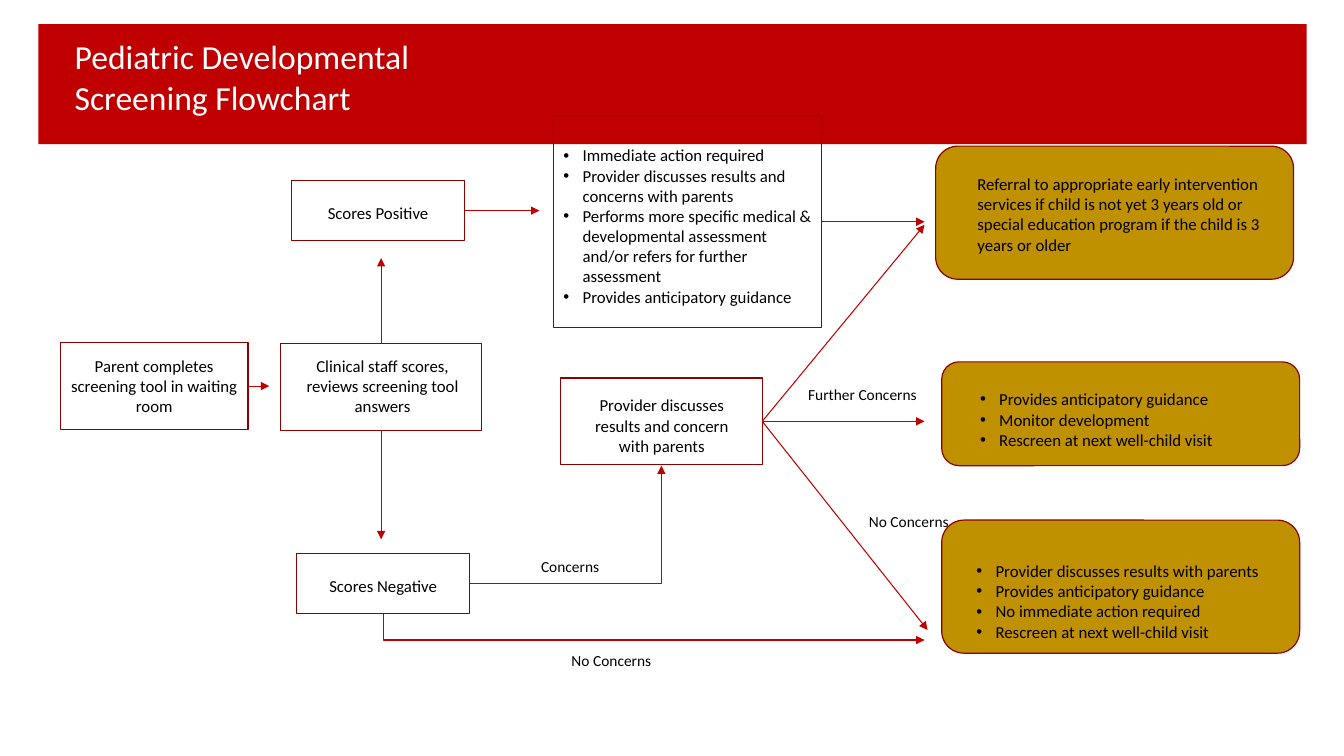
from lxml.etree import SubElement
from pptx import Presentation
from pptx.dml.color import RGBColor
from pptx.enum.shapes import MSO_CONNECTOR, MSO_SHAPE
from pptx.enum.text import MSO_ANCHOR, MSO_AUTO_SIZE, PP_ALIGN
from pptx.oxml.ns import qn
from pptx.util import Inches, Pt

COLORS = {"banner": "C00000", "border": "8E0000", "outcome": "BF9000",
          "arrow": "C00000", "text": "000000", "title": "FFFFFF"}
TOP, BOTTOM, RIGHT = 0, 2, 3


def color(name):
    """Return the named palette colour."""
    return RGBColor.from_string(COLORS[name])


def add_bullet(paragraph):
    """Give a paragraph a hanging round bullet."""
    properties = paragraph._p.get_or_add_pPr()
    properties.set("marL", str(Inches(0.19)))
    properties.set("indent", str(-Inches(0.19)))
    SubElement(properties, qn("a:buFont")).set("typeface", "Arial")
    SubElement(properties, qn("a:buChar")).set("char", "•")


def write(frame, text, size=12, tone="text", align=PP_ALIGN.LEFT,
          bullets=False, margins=(0.1, 0.05, 0.1)):
    """Fill a text frame; margins are left, top and right."""
    frame.text = text
    frame.word_wrap = True
    frame.auto_size = MSO_AUTO_SIZE.NONE
    frame.vertical_anchor = MSO_ANCHOR.TOP
    frame.margin_left, frame.margin_top, frame.margin_right = map(Inches, margins)
    frame.margin_bottom = 0
    for paragraph in frame.paragraphs:
        paragraph.alignment = align
        if bullets:
            add_bullet(paragraph)
        for run in paragraph.runs:
            run.font.name = "Calibri"
            run.font.size = Pt(size)
            run.font.color.rgb = color(tone)


def add_header(slide, box, text):
    """Place the banner in its box with the title on it."""
    left, top, width, height = box
    banner = slide.shapes.add_shape(MSO_SHAPE.RECTANGLE, *map(Inches, box))
    banner.shadow.inherit = False
    banner.fill.solid()
    banner.fill.fore_color.rgb = color("banner")
    banner.line.fill.background()
    title = slide.shapes.title
    title.left, title.top = Inches(left + 0.26), Inches(top + 0.07)
    title.width, title.height = Inches(4.07), Inches(0.91)
    write(title.text_frame, text, 24, "title")
    title.element.addprevious(banner.element)


def add_box(slide, box, text, margins, outcome=False, **style):
    """Add a bordered step, or a rounded and filled outcome."""
    kind = MSO_SHAPE.ROUNDED_RECTANGLE if outcome else MSO_SHAPE.RECTANGLE
    step = slide.shapes.add_shape(kind, *map(Inches, box))
    step.shadow.inherit = False
    if outcome:
        step.fill.solid()
        step.fill.fore_color.rgb = color("outcome")
    else:
        step.fill.background()
    step.line.color.rgb = color("border")
    step.line.width = Pt(0.85)
    write(step.text_frame, text, margins=margins, **style)
    return step


def style_arrow(connector, head="tailEnd"):
    """Colour a connector and put a triangle on one end."""
    connector.line.color.rgb = color("arrow")
    connector.line.width = Pt(0.75)
    properties = connector._element.spPr
    SubElement(properties.find(qn("a:ln")), qn("a:" + head)).set("type", "triangle")
    SubElement(properties, qn("a:effectLst"))


def add_arrow(slide, source, side, end):
    """Draw a straight arrow from the side of a step to a point."""
    x, y = map(Inches, end)
    arrow = slide.shapes.add_connector(MSO_CONNECTOR.STRAIGHT, x, y, x, y)
    arrow.begin_connect(source, side)
    style_arrow(arrow)


def add_bend(slide, start, end, head):
    """Draw an elbow that runs across from start, then up to end."""
    bend = slide.shapes.add_connector(
        MSO_CONNECTOR.ELBOW, *map(Inches, start + end))
    bend._element.spPr.find(qn("a:prstGeom")).set("prst", "bentConnector2")
    style_arrow(bend, head)


def add_label(slide, left, top, text):
    """Add a centred label for a branch."""
    label = slide.shapes.add_textbox(*map(Inches, (left, top, 1.47, 0.29)))
    write(label.text_frame, text, 11, align=PP_ALIGN.CENTER)


def add_steps(slide):
    """Add the screening steps and the arrows that leave them."""
    centre = {"align": PP_ALIGN.CENTER}
    parent = add_box(slide, (0.6, 3.4, 1.86, 0.86),
                     "Parent completes screening tool in waiting room",
                     (0.1, 0.13, 0.1), **centre)
    staff = add_box(slide, (2.78, 3.41, 2, 0.86),
                    "Clinical staff scores, reviews screening tool answers",
                    (0.2, 0.12, 0.17), **centre)
    positive = add_box(slide, (2.89, 1.79, 1.72, 0.6), "Scores Positive",
                       (0.1, 0.22, 0.1), **centre)
    add_box(slide, (2.94, 5.49, 1.72, 0.6), "Scores Negative",
            (0.1, 0.22, 0.1), **centre)
    action = add_box(slide, (5.49, 1.15, 2.66, 2.1),
                     "Immediate action required\n"
                     "Provider discusses results and concerns with parents\n"
                     "Performs more specific medical & developmental assessment "
                     "and/or refers for further assessment\n"
                     "Provides anticipatory guidance",
                     (0.1, 0.29, 0.1), bullets=True)
    provider = add_box(slide, (5.56, 3.75, 2, 0.86),
                       "Provider discusses results and concern with parents",
                       (0.19, 0.17, 0.18), **centre)
    for source, side, end in (
            (parent, RIGHT, (2.67, 3.83)),
            (staff, TOP, (3.78, 2.56)),
            (staff, BOTTOM, (3.78, 5.35)),
            (positive, RIGHT, (5.35, 2.09)),
            (action, RIGHT, (9.17, 2.2)),
            (provider, RIGHT, (9.17, 2.23)),
            (provider, RIGHT, (9.17, 4.18)),
            (provider, RIGHT, (9.2, 6.25))):
        add_arrow(slide, source, side, end)
    add_bend(slide, (4.66, 5.79), (6.56, 4.62), "tailEnd")
    add_bend(slide, (9.17, 6.35), (3.8, 6.09), "headEnd")


def add_outcomes(slide):
    """Add the three outcomes on the right."""
    add_box(slide, (9.28, 1.45, 3.55, 1.32),
            "Referral to appropriate early intervention services if child is "
            "not yet 3 years old or special education program if the child is "
            "3 years or older", (0.35, 0.21, 0.26), outcome=True)
    add_box(slide, (9.34, 3.59, 3.55, 1.03),
            "Provides anticipatory guidance\nMonitor development\n"
            "Rescreen at next well-child visit",
            (0.33, 0.22, 0.28), outcome=True, bullets=True)
    add_box(slide, (9.34, 5.16, 3.55, 1.32),
            "Provider discusses results with parents\n"
            "Provides anticipatory guidance\nNo immediate action required\n"
            "Rescreen at next well-child visit",
            (0.28, 0.34, 0.19), outcome=True, bullets=True)


def main():
    """Build the flowchart slide."""
    deck = Presentation()
    deck.slide_width, deck.slide_height = Inches(13.33), Inches(7.5)
    slide = deck.slides.add_slide(deck.slide_layouts[5])
    add_header(slide, (0.38, 0.24, 12.58, 1.19),
               "Pediatric Developmental Screening Flowchart")
    add_steps(slide)
    add_outcomes(slide)
    for left, top, text in ((4.92, 5.48, "Concerns"),
                            (5.33, 6.41, "No Concerns"),
                            (7.82, 3.77, "Further Concerns"),
                            (8.28, 5.03, "No Concerns")):
        add_label(slide, left, top, text)
    deck.save("out.pptx")


if __name__ == "__main__":
    main()
